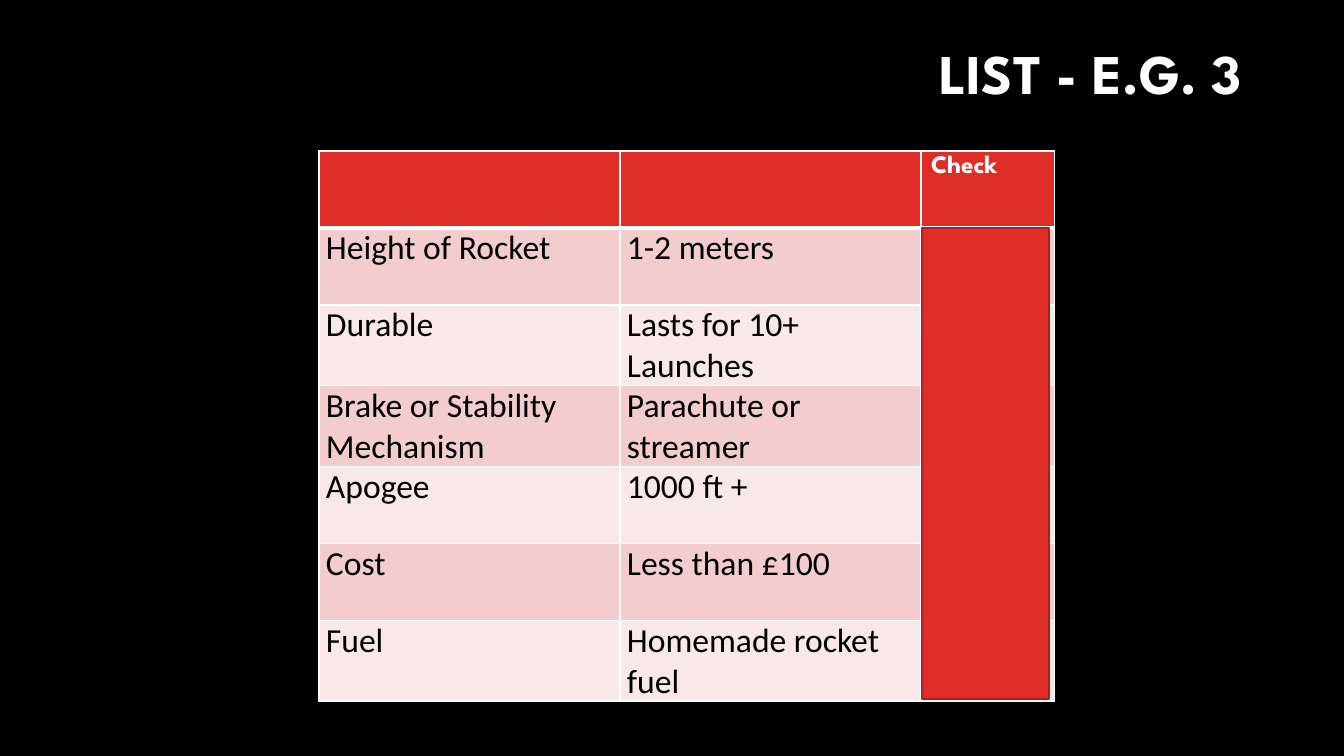
"""Build a rocket specification checklist slide with a cover over the check column."""
from lxml import etree
from pptx import Presentation, util as u
from pptx.dml.color import RGBColor
from pptx.enum import shapes, text
from pptx.oxml.ns import qn

TITLE = "LIST - E.G. 3"
HEADER = ("", "", "Check")
SPECS = [
    ("Height of Rocket", "1-2 meters", ""),
    ("Durable", "Lasts for 10+ Launches", ""),
    ("Brake or Stability Mechanism", "Parachute or streamer", ""),
    ("Apogee", "1000 ft +", ""),
    ("Cost", "Less than £100", ""),
    ("Fuel", "Homemade rocket fuel", ""),
]

SLIDE = (1344, 756)
TITLE_BOX = (93, 40, 1159, 73)
TABLE_AT = (319, 151)
COLS = (301, 301, 134)
ROW_H = 77
COVER = (922, 228, 127, 471)
CELL_PAD = {"margin_left": 7, "margin_right": 7, "margin_top": 0, "margin_bottom": 0}

THEME = {
    "back": "000000", "white": "FFFFFF", "ink": "000000",
    "red": "DF2E28", "edge": "A5221E", "bands": ("F3CDCD", "F9E8E8"),
    "display": "League Spartan", "body": "Calibri",
    "title_pt": 40, "header_pt": 18, "body_pt": 24, "rule_pt": 1, "header_rule_pt": 3,
}


def px(n):
    return round(n * 914400 / 100.8)


def paint(fill, color):
    fill.solid()
    fill.fore_color.rgb = RGBColor.from_string(color)


def write(tf, words, face, size, color, bold):
    p = tf.paragraphs[0]
    r = p.add_run()
    r.text = words
    for name, value in {"name": face, "size": u.Pt(size), "bold": bold}.items():
        setattr(r.font, name, value)
    r.font.color.rgb = RGBColor.from_string(color)
    return p


def add_border(cell, side, points):
    ln = etree.SubElement(cell._tc.get_or_add_tcPr(), qn(f"a:ln{side}"), w=str(u.Pt(points)))
    fill = etree.SubElement(ln, qn("a:solidFill"))
    etree.SubElement(fill, qn("a:srgbClr"), val=THEME["white"])


def add_title(s):
    tf = s.shapes.add_textbox(*map(px, TITLE_BOX)).text_frame
    tf.word_wrap = True
    tf.vertical_anchor = text.MSO_ANCHOR.MIDDLE
    p = write(tf, TITLE, THEME["display"], THEME["title_pt"], THEME["white"], True)
    p.alignment = text.PP_ALIGN.RIGHT
    p.line_spacing = 0.9


def fill_cell(cell, row, col, words):
    is_header, is_check = row == 0, col == len(COLS) - 1
    heavy = {(0, "B"), (1, "T")}
    for side in "LRTB":
        add_border(cell, side, THEME["header_rule_pt" if (row, side) in heavy else "rule_pt"])
    paint(cell.fill, THEME["red"] if is_header else THEME["bands"][(row - 1) % 2])
    if not is_header and not is_check:
        for name, value in CELL_PAD.items():
            setattr(cell, name, px(value))
    if words and is_header:
        write(cell.text_frame, words, THEME["display"], THEME["header_pt"], THEME["white"], True)
    elif words:
        write(cell.text_frame, words, THEME["body"], THEME["body_pt"], THEME["ink"], False)


def add_checklist(s):
    rows = [HEADER, *SPECS]
    size = (sum(COLS), ROW_H * len(rows))
    table = s.shapes.add_table(len(rows), len(COLS), *map(px, TABLE_AT + size)).table
    table.first_row = table.horz_banding = False
    for column, width in zip(table.columns, COLS):
        column.width = px(width)
    for i, row in enumerate(rows):
        table.rows[i].height = px(ROW_H)
        for j, words in enumerate(row):
            fill_cell(table.cell(i, j), i, j, words)


def add_cover(s):
    sp = s.shapes.add_shape(shapes.MSO_SHAPE.RECTANGLE, *map(px, COVER))
    sp.shadow.inherit = False
    paint(sp.fill, THEME["red"])
    paint(sp.line.fill, THEME["edge"])
    sp.line.width = u.Pt(THEME["rule_pt"])


def main():
    prs = Presentation()
    prs.slide_width, prs.slide_height = map(px, SLIDE)
    s = prs.slides.add_slide(prs.slide_layouts[6])
    paint(s.background.fill, THEME["back"])
    add_title(s)
    add_checklist(s)
    add_cover(s)
    prs.save("out.pptx")


if __name__ == "__main__":
    main()
